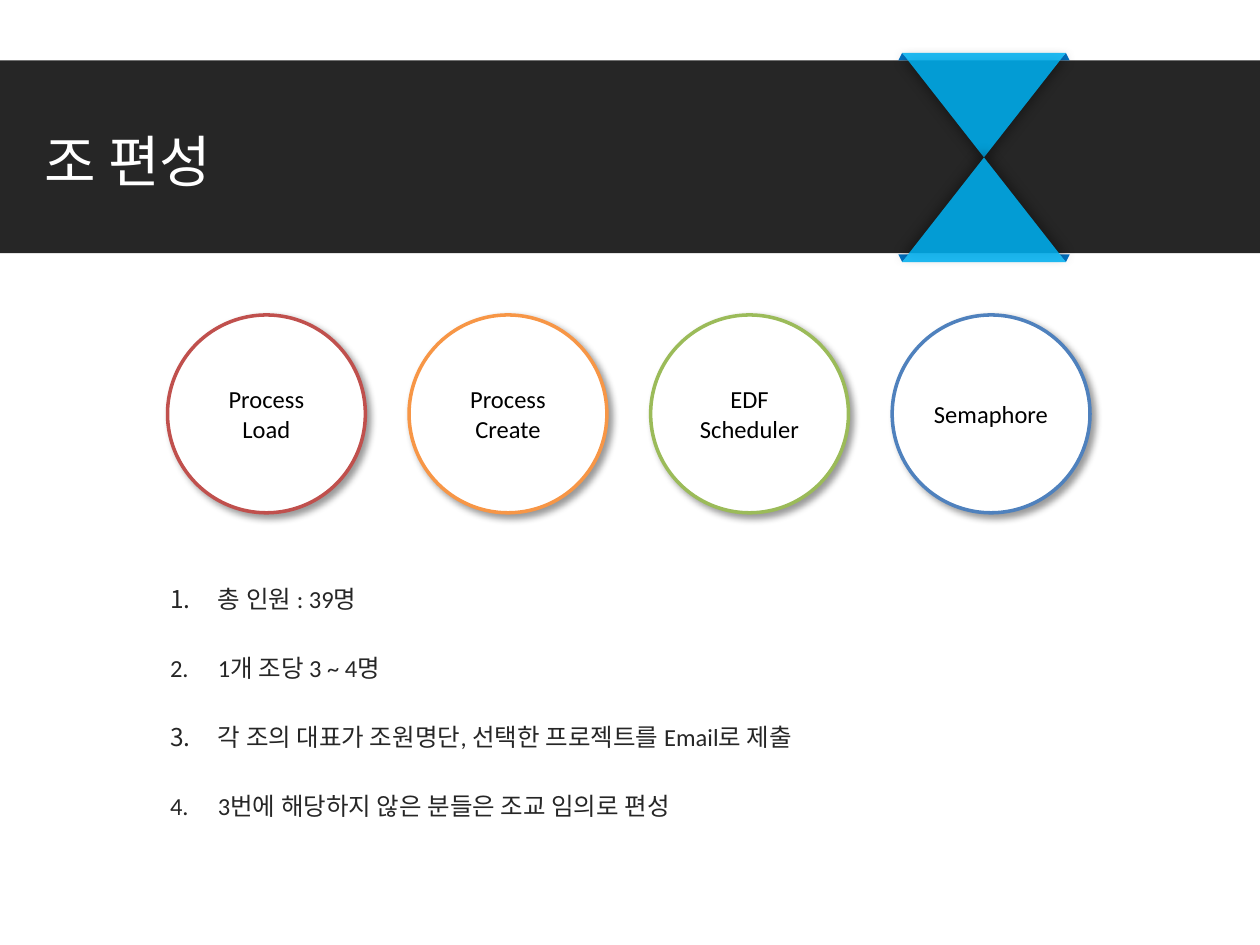
from pptx import Presentation
from pptx.dml.color import RGBColor
from pptx.enum.shapes import MSO_SHAPE as Preset
from pptx.enum.text import MSO_ANCHOR as Anchor, PP_ALIGN as Align
from pptx.oxml.ns import qn
from pptx.util import Inches, Pt
from lxml.etree import SubElement

CENTER_X, CENTER_Y = 7.81, 1.25
TOPICS = [
    (["Process Load"], "C0504D"),
    (["Process", "Create"], "F79646"),
    (["EDF", "Scheduler"], "9BBB59"),
    (["Semaphore"], "4F81BD"),
]
RULES = [
    "총 인원 : 39명",
    "1개 조당 3 ~ 4명",
    "각 조의 대표가 조원명단, 선택한 프로젝트를 Email로 제출",
    "3번에 해당하지 않은 분들은 조교 임의로 편성",
]


def color(value):
    return RGBColor.from_string(value)


class SlideBuilder:
    """Holds the text style and the current slide, and draws its elements."""

    font_name = "Calibri"
    font_size = 14
    dark = "262626"

    def __init__(self, slide):
        self.slide = slide

    def paint(self, shape, fill, line=None):
        shape.shadow.inherit = False
        shape.fill.solid()
        shape.fill.fore_color.rgb = color(fill)
        if line:
            shape.line.color.rgb = color(line)
            shape.line.width = Pt(2)
        else:
            shape.line.fill.background()
        return shape

    def shape(self, preset, box, fill, line=None):
        shape = self.slide.shapes.add_shape(preset, *map(Inches, box))
        return self.paint(shape, fill, line)

    def shadow(self, shape, blur, angle):
        effects = shape.element.spPr.find(qn("a:effectLst"))
        outer = SubElement(effects, qn("a:outerShdw"), blurRad=str(Pt(blur)), dist=str(Pt(3)),
                           dir=str(angle * 60000), algn="ctr", rotWithShape="0")
        tint = SubElement(outer, qn("a:srgbClr"), val="000000")
        SubElement(tint, qn("a:alpha"), val="40000")

    def style(self, paragraph, fill, size=None, name=None):
        paragraph.font.size = Pt(size or self.font_size)
        paragraph.font.name = name or self.font_name
        paragraph.font.color.rgb = color(fill)

    def fold(self, side, end):
        points = [(Inches(CENTER_X + side * x), Inches(CENTER_Y + end * y))
                  for x, y in [(0.65, 0.83), (0.68, 0.77), (0.6, 0.77)]]
        builder = self.slide.shapes.build_freeform(*points[0])
        builder.add_line_segments(points[1:])
        self.paint(builder.convert_to_shape(), "0070C0")

    def ribbon(self, top, angle, flipped):
        shape = self.shape(Preset.ISOSCELES_TRIANGLE, (CENTER_X - 0.65, top, 1.3, 0.83), "00B0F0")
        tint = shape.element.spPr.find(qn("a:solidFill"))[0]
        SubElement(tint, qn("a:alpha"), val="87000")
        if flipped:
            shape.element.spPr.xfrm.set("flipV", "1")
        self.shadow(shape, 7, angle)

    def circle(self, left, lines, line):
        shape = self.shape(Preset.OVAL, (left, 2.5, 1.57, 1.57), "FFFFFF", line)
        self.shadow(shape, 4, 45)
        frame = shape.text_frame
        frame.vertical_anchor = Anchor.MIDDLE
        frame.text = "\n".join(lines)
        for paragraph in frame.paragraphs:
            paragraph.alignment = Align.CENTER
            self.style(paragraph, "000000")

    def placeholder(self, index, box, text):
        shape = self.slide.placeholders[index]
        shape.left, shape.top, shape.width, shape.height = map(Inches, box)
        self.slide.shapes.element.append(shape.element)
        shape.text_frame.text = text
        return shape.text_frame

    def title(self, text):
        frame = self.placeholder(0, (0.25, 0.92, 5.92, 0.7), text)
        frame.vertical_anchor = Anchor.MIDDLE
        frame.paragraphs[0].alignment = Align.LEFT
        self.style(frame.paragraphs[0], "FFFFFF", 32, "Arial")

    def numbered_list(self, items):
        frame = self.placeholder(1, (0.25, 4.58, 9.37, 2.25), "\n".join(items))
        for paragraph in frame.paragraphs:
            paragraph.level = 2
            properties = paragraph._p.get_or_add_pPr()
            properties.set("marL", str(Inches(1.38)))
            properties.set("indent", str(Inches(-0.38)))
            SubElement(properties, qn("a:buFont"), typeface=self.font_name)
            SubElement(properties, qn("a:buAutoNum"), type="arabicPeriod")
            paragraph.line_spacing = Pt(17)
            paragraph.space_before = Pt(2.8)
            paragraph.space_after = Pt(19.6)
            self.style(paragraph, self.dark)


def main():
    presentation = Presentation()
    presentation.slide_width, presentation.slide_height = Inches(10), Inches(7.5)
    builder = SlideBuilder(presentation.slides.add_slide(presentation.slide_layouts[1]))
    builder.shape(Preset.RECTANGLE, (0, 0.48, 10, 1.53), builder.dark)
    for end in (-1, 1):
        for side in (-1, 1):
            builder.fold(side, end)
    builder.ribbon(CENTER_Y - 0.83, 90, True)
    builder.ribbon(CENTER_Y, 270, False)
    builder.title("조 편성")
    builder.numbered_list(RULES)
    for index, (lines, line) in enumerate(TOPICS):
        builder.circle(1.33 + index * 1.917, lines, line)
    presentation.save("out.pptx")


if __name__ == "__main__":
    main()
